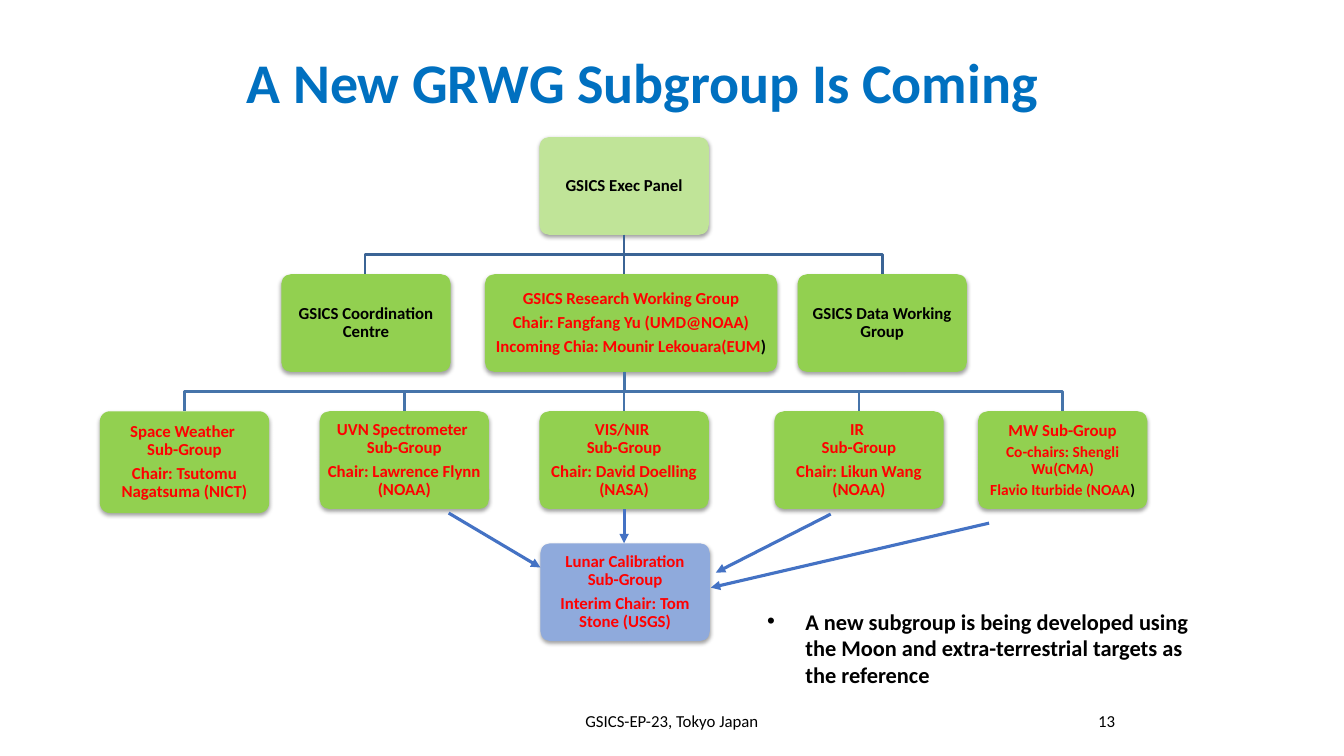
from pptx import Presentation
from pptx.dml.color import RGBColor
from pptx.enum.shapes import MSO_CONNECTOR, MSO_SHAPE
from pptx.enum.text import MSO_ANCHOR, PP_ALIGN
from pptx.oxml.ns import qn
from pptx.util import Inches, Pt
from lxml.etree import SubElement


class Theme:
    font = "Calibri"
    blue, black, red = "0070C0", "000000", "FF0000"
    pale, green, lunar = "C0E498", "92D050", "8FAADC"
    upper, lower, arrow = "3B6495", "4674AA", "4472C4"
    title, body, label, small, foot = 40, 16, 12, 11, 12


WIDE, HIGH = 1.68, 0.97
MID = 6.19
TOP, GROUPS, SUBS, MOON = 1.36, 2.72, 4.08, 5.39


def color(code):
    return RGBColor.from_string(code)


def add_run(para, text, size, code, bold=True):
    """Add text to a paragraph, with a line break at each newline."""
    for i, part in enumerate(text.split("\n")):
        if i:
            para.add_line_break()
        run = para.add_run()
        run.text = part
        font = run.font
        font.name, font.size, font.bold = Theme.font, Pt(size), bold
        font.color.rgb = color(code)


def set_frame(frame, side, edge, anchor=MSO_ANCHOR.MIDDLE):
    frame.word_wrap = True
    frame.vertical_anchor = anchor
    frame.margin_left = frame.margin_right = Inches(side)
    frame.margin_top = frame.margin_bottom = Inches(edge)


def add_text(slide, box, anchor=MSO_ANCHOR.MIDDLE):
    frame = slide.shapes.add_textbox(*map(Inches, box)).text_frame
    set_frame(frame, 0.1, 0.05, anchor)
    return frame.paragraphs[0]


# Title and footer
def add_title(slide, box, text):
    shape = slide.shapes.title
    shape.left, shape.top, shape.width, shape.height = map(Inches, box)
    set_frame(shape.text_frame, 0.1, 0.05)
    para = shape.text_frame.paragraphs[0]
    para.alignment = PP_ALIGN.CENTER
    add_run(para, text, Theme.title, Theme.blue)


def add_foot(slide, box, text, align):
    para = add_text(slide, box)
    para.alignment = align
    add_run(para, text, Theme.foot, Theme.black, False)


# Bulleted note
def add_note(slide, box, text):
    para = add_text(slide, box, MSO_ANCHOR.TOP)
    props = para._p.get_or_add_pPr()
    props.set("marL", str(Inches(0.38)))
    props.set("indent", str(Inches(-0.38)))
    SubElement(props, qn("a:buFont"), typeface="Arial")
    SubElement(props, qn("a:buChar"), char="•")
    add_run(para, text, Theme.body, Theme.black)


# Chart boxes
def add_shade(shape):
    shape.shadow.inherit = False
    effects = shape._element.spPr.find(qn("a:effectLst"))
    shade = SubElement(effects, qn("a:outerShdw"), blurRad=str(Pt(3.1)),
                       dist=str(Pt(1.6)), dir="5400000", algn="ctr", rotWithShape="0")
    tint = SubElement(shade, qn("a:srgbClr"), val=Theme.black)
    SubElement(tint, qn("a:alpha"), val="37000")


def add_box(slide, box, fill, code, lines, side=0.05, edge=0.05):
    """Each line is (text, size, space before); a closing tail is black."""
    shape = slide.shapes.add_shape(MSO_SHAPE.ROUNDED_RECTANGLE, *map(Inches, box))
    shape.adjustments[0] = 0.1
    shape.fill.solid()
    shape.fill.fore_color.rgb = color(fill)
    shape.line.fill.background()
    add_shade(shape)
    frame = shape.text_frame
    set_frame(frame, side, edge)
    for i, (text, size, gap, *tail) in enumerate(lines):
        para = frame.add_paragraph() if i else frame.paragraphs[0]
        para.alignment = PP_ALIGN.CENTER
        para.line_spacing = 0.9
        para.space_before = Pt(gap)
        add_run(para, text, size, code)
        for end in tail:
            add_run(para, end, size, Theme.black)


# Lines and arrows
def add_line(slide, start, end, code, width, head=False):
    line = slide.shapes.add_connector(MSO_CONNECTOR.STRAIGHT, *map(Inches, start + end))
    line.line.color.rgb = color(code)
    line.line.width = Pt(width)
    if head:
        SubElement(line.line._get_or_add_ln(), qn("a:tailEnd"), type="triangle")
    SubElement(line._element.spPr, qn("a:effectLst"))


def add_link(slide, x, top, end, code):
    """Run from the middle stem down to the box centred on x."""
    if x == MID:
        add_line(slide, (x, top), (x, end), code, 2)
        return
    bend = (top + end) / 2
    path = slide.shapes.build_freeform(Inches(MID), Inches(top))
    path.add_line_segments([(Inches(a), Inches(b)) for a, b in
                            ((MID, bend), (x, bend), (x, end))], close=False)
    shape = path.convert_to_shape()
    shape.fill.background()
    shape.line.color.rgb = color(code)
    shape.line.width = Pt(2)
    shape.shadow.inherit = False


def add_chart(slide):
    size, small = Theme.label, Theme.small

    def place(x, y, fill, code, lines, high=HIGH, **pads):
        add_box(slide, (x - WIDE / 2, y, WIDE, high), fill, code, lines, **pads)

    # Panel and working groups
    place(MID, TOP, Theme.pale, Theme.black, [("GSICS Exec Panel", size, 0)])
    for x in (3.62, MID, 8.75):
        add_link(slide, x, TOP + HIGH, GROUPS, Theme.upper)
    for x, name in ((3.63, "GSICS Coordination Centre"), (8.75, "GSICS Data Working Group")):
        place(x, GROUPS, Theme.green, Theme.black, [(name, size, 0)])
    add_box(slide, (4.81, GROUPS, 2.9, HIGH), Theme.green, Theme.red, [
        ("GSICS Research Working Group", size, 0),
        ("Chair: Fangfang Yu (UMD@NOAA)", size, 4.2),
        ("Incoming Chia: Mounir Lekouara(EUM", size, 4.2, ")")], side=0.02)

    # Sub-groups
    subs = [
        (1.83, "Space Weather \nSub-Group", "Chair: Tsutomu Nagatsuma (NICT)", 1.01),
        (4.01, "UVN Spectrometer \nSub-Group", "Chair: Lawrence Flynn (NOAA)", HIGH),
        (MID, "VIS/NIR \nSub-Group", "Chair: David Doelling (NASA)", HIGH),
        (8.52, "IR \nSub-Group", "Chair: Likun Wang (NOAA)", HIGH),
    ]
    for x, name, chair, high in subs:
        add_link(slide, x, GROUPS + HIGH, SUBS, Theme.lower)
        place(x, SUBS, Theme.green, Theme.red, [(name, size, 0), (chair, size, 4.2)], high)
    add_link(slide, 10.54, GROUPS + HIGH, SUBS, Theme.lower)
    place(10.54, SUBS, Theme.green, Theme.red, [
        ("MW Sub-Group", size, 0),
        ("Co-chairs: Shengli Wu(CMA)", small, 3.1),
        ("Flavio Iturbide (NOAA", small, 3.1, ")")], side=0.04, edge=0.04)

    # New lunar sub-group
    place(6.2, MOON, Theme.lunar, Theme.red, [
        ("Lunar Calibration", size, 0), ("Sub-Group", size, 0),
        ("Interim Chair: Tom Stone (USGS)", size, 4.2)])
    for start, end in (((MID, SUBS + HIGH), (MID, MOON)), ((8.24, 5.1), (7.1, 5.68)),
                       ((9.81, 5.19), (7.05, 5.83)), ((4.45, 5.09), (5.36, 5.63))):
        add_line(slide, start, end, Theme.arrow, 2.25, True)


def main():
    deck = Presentation()
    deck.slide_width, deck.slide_height = Inches(13.33), Inches(7.5)
    slide = deck.slides.add_slide(deck.slide_layouts[5])
    add_title(slide, (2.17, 0.24, 8.4, 1.12), "A New GRWG Subgroup Is Coming")
    add_chart(slide)
    add_note(slide, (7.51, 5.98, 4.54, 0.88), "A new subgroup is being developed using "
             "the Moon and extra-terrestrial targets as the reference")
    add_foot(slide, (5.08, 6.95, 3.17, 0.4), "GSICS-EP-23, Tokyo Japan", PP_ALIGN.CENTER)
    add_foot(slide, (8.83, 6.95, 2.33, 0.4), "13", PP_ALIGN.RIGHT)
    deck.save("out.pptx")


if __name__ == "__main__":
    main()
